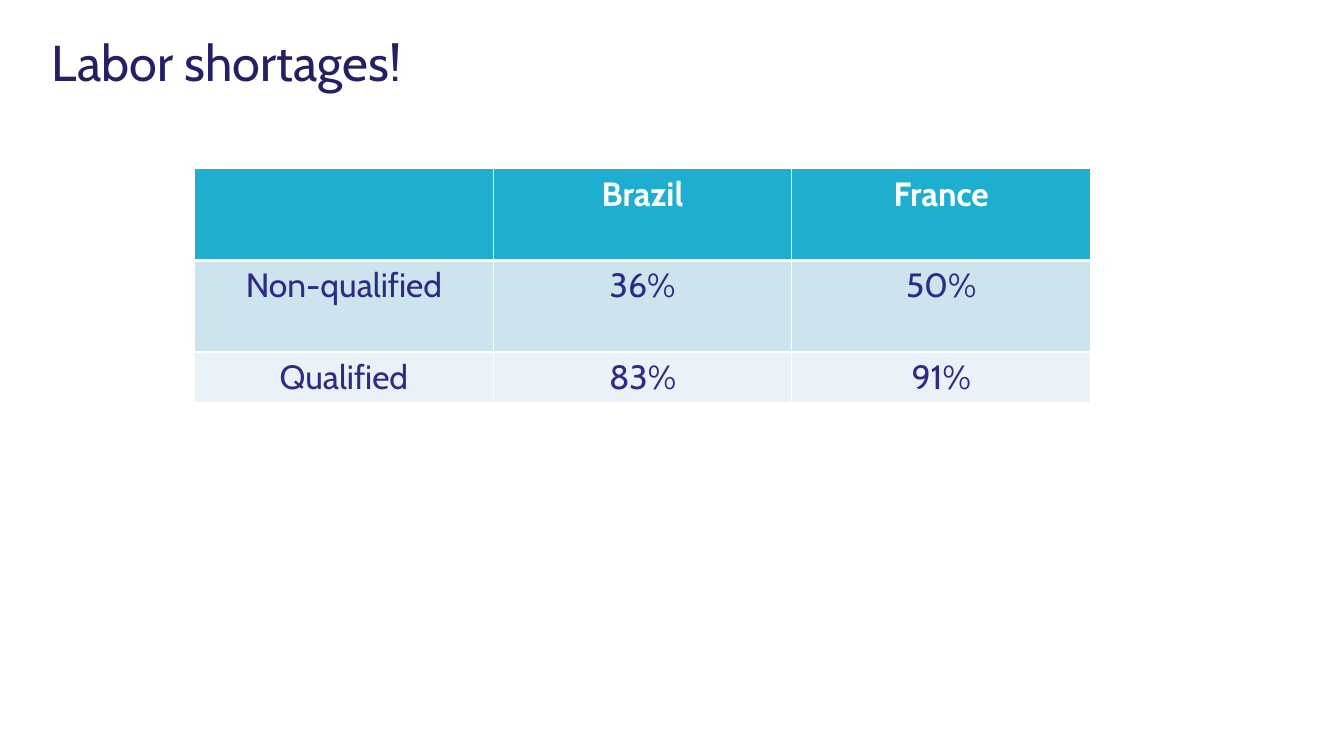
from pptx import Presentation
from pptx.dml.color import RGBColor
from pptx.enum.text import MSO_ANCHOR, PP_ALIGN
from pptx.oxml import parse_xml
from pptx.oxml.ns import nsdecls
from pptx.util import Pt

FONT = "Cabin"
WHITE = "FFFFFF"
ROWS = [
    ("", "Brazil", "France"),
    ("Non-qualified", "36%", "50%"),
    ("Qualified", "83%", "91%"),
]
ROW_FILLS = ["1EAFD0", "CDE3EE", "E8F2F7"]
ROW_HEIGHTS = [65.5, 65.5, 36]


def rgb(color):
    """Turn a hex string into a colour."""
    return RGBColor.from_string(color)


def style(p, size, color, bold=False):
    """Format every run of a paragraph."""
    for r in p.runs:
        r.font.name = FONT
        r.font.size = Pt(size)
        r.font.bold = bold
        r.font.color.rgb = rgb(color)


def add_title(s, text):
    """Add the slide heading."""
    tf = s.shapes.add_textbox(Pt(30), Pt(18), Pt(858), Pt(51)).text_frame
    tf.word_wrap = True
    tf.vertical_anchor = MSO_ANCHOR.MIDDLE
    tf.text = text
    style(tf.paragraphs[0], 36, "232064")


def add_borders(cell, widths):
    """Draw white cell borders of the given widths per side."""
    tc_pr = cell._tc.get_or_add_tcPr()
    for side, width in widths.items():
        tc_pr.append(parse_xml(
            f'<a:ln{side} {nsdecls("a")} w="{Pt(width)}"><a:solidFill>'
            f'<a:srgbClr val="{WHITE}"/></a:solidFill></a:ln{side}>'))


def add_shortage_table(s):
    """Add the table of shortages by country and qualification."""
    table = s.shapes.add_table(len(ROWS), len(ROWS[0]), Pt(139), Pt(120.5),
                               Pt(640), Pt(sum(ROW_HEIGHTS))).table
    for column in table.columns:
        column.width = Pt(640 / len(ROWS[0]))
    for i, values in enumerate(ROWS):
        table.rows[i].height = Pt(ROW_HEIGHTS[i])
        header = i == 0
        widths = {"L": 1, "R": 1, "T": 3 if i == 1 else 1, "B": 3 if header else 1}
        for j, value in enumerate(values):
            cell = table.cell(i, j)
            add_borders(cell, widths)
            cell.fill.solid()
            cell.fill.fore_color.rgb = rgb(ROW_FILLS[i])
            cell.text_frame.text = value
            p = cell.text_frame.paragraphs[0]
            p.alignment = PP_ALIGN.CENTER
            style(p, 24, WHITE if header else "2F2A85", header)


def main():
    """Build and save the slide."""
    prs = Presentation()
    prs.slide_width, prs.slide_height = Pt(960), Pt(540)
    s = prs.slides.add_slide(prs.slide_layouts[6])
    add_title(s, "Labor shortages!")
    add_shortage_table(s)
    prs.save("out.pptx")


if __name__ == "__main__":
    main()
